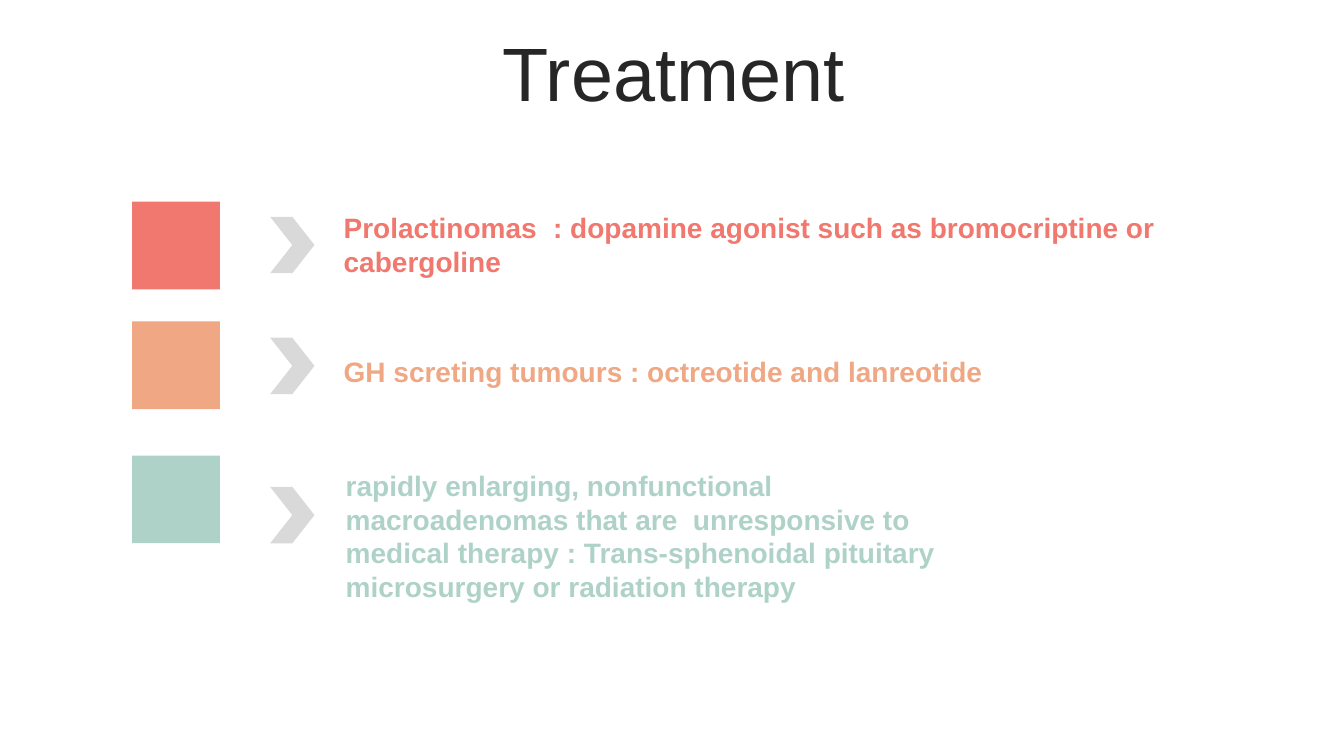
from dataclasses import dataclass

from pptx import Presentation
from pptx.dml.color import RGBColor
from pptx.enum.shapes import MSO_SHAPE
from pptx.enum.text import MSO_ANCHOR, MSO_AUTO_SIZE, PP_ALIGN
from pptx.util import Inches, Pt

SLIDE_W, SLIDE_H = Inches(13.33), Inches(7.5)


@dataclass(frozen=True)
class Theme:
    font: str = "Arial"
    title_size: int = 54
    body_size: int = 20
    ink: str = "262626"
    arrow: str = "D9D9D9"
    coral: str = "F0786E"
    peach: str = "F0A884"
    mint: str = "AFD2C8"


THEME = Theme()
SQUARE = dict(x=9.83, w=6.53, h=11.6)
CHEVRON = dict(x=20.1, w=3.3, h=7.47)

TREATMENTS = [
    dict(
        text="Prolactinomas\t : dopamine agonist such as bromocriptine or cabergoline",
        color=THEME.coral, square_y=26.67, chevron_y=28.67,
        box=(24.83, 27.2, 72.92, 10.27), wrap=True,
    ),
    dict(
        text="GH screting tumours : octreotide and lanreotide",
        color=THEME.peach, square_y=42.53, chevron_y=44.67,
        box=(24.83, 46.27, 49.96, 5.87), wrap=False,
    ),
    dict(
        text="rapidly enlarging, nonfunctional macroadenomas that are  unresponsive to "
             "medical therapy : Trans-sphenoidal pituitary microsurgery or radiation therapy",
        color=THEME.mint, square_y=60.27, chevron_y=64.4,
        box=(24.98, 61.33, 50.04, 19.33), wrap=True,
    ),
]


def place(x, y, w, h):
    return (round(SLIDE_W * x / 100), round(SLIDE_H * y / 100),
            round(SLIDE_W * w / 100), round(SLIDE_H * h / 100))


def add_block(s, kind, color, x, y, w, h):
    sp = s.shapes.add_shape(kind, *place(x, y, w, h))
    sp.shadow.inherit = False
    sp.fill.solid()
    sp.fill.fore_color.rgb = RGBColor.from_string(color)
    sp.line.fill.background()


def add_text(s, text, box, color, size=THEME.body_size, bold=False, wrap=True,
             align=PP_ALIGN.LEFT, anchor=MSO_ANCHOR.TOP, spacing=None, before=0,
             fit=MSO_AUTO_SIZE.SHAPE_TO_FIT_TEXT):
    tf = s.shapes.add_textbox(*place(*box)).text_frame
    tf.word_wrap = wrap
    tf.auto_size = fit
    tf.vertical_anchor = anchor
    p = tf.paragraphs[0]
    p.alignment = align
    p.line_spacing = spacing
    p.space_before = Pt(before)
    r = p.add_run()
    r.text = text
    r.font.name = THEME.font
    r.font.size = Pt(size)
    r.font.bold = bold
    r.font.color.rgb = RGBColor.from_string(color)


def add_treatment(s, text, color, square_y, chevron_y, box, wrap):
    add_block(s, MSO_SHAPE.RECTANGLE, color, y=square_y, **SQUARE)
    add_block(s, MSO_SHAPE.CHEVRON, THEME.arrow, y=chevron_y, **CHEVRON)
    add_text(s, text, box, color, bold=True, wrap=wrap)


def main():
    prs = Presentation()
    prs.slide_width, prs.slide_height = SLIDE_W, SLIDE_H
    s = prs.slides.add_slide(prs.slide_layouts[6])
    add_text(s, "Treatment", (2.63, 4.93, 94.97, 10.53), THEME.ink,
             size=THEME.title_size, align=PP_ALIGN.CENTER, anchor=MSO_ANCHOR.MIDDLE,
             spacing=0.9, before=10, fit=MSO_AUTO_SIZE.NONE)
    for treatment in TREATMENTS:
        add_treatment(s, **treatment)
    prs.save("out.pptx")


if __name__ == "__main__":
    main()
